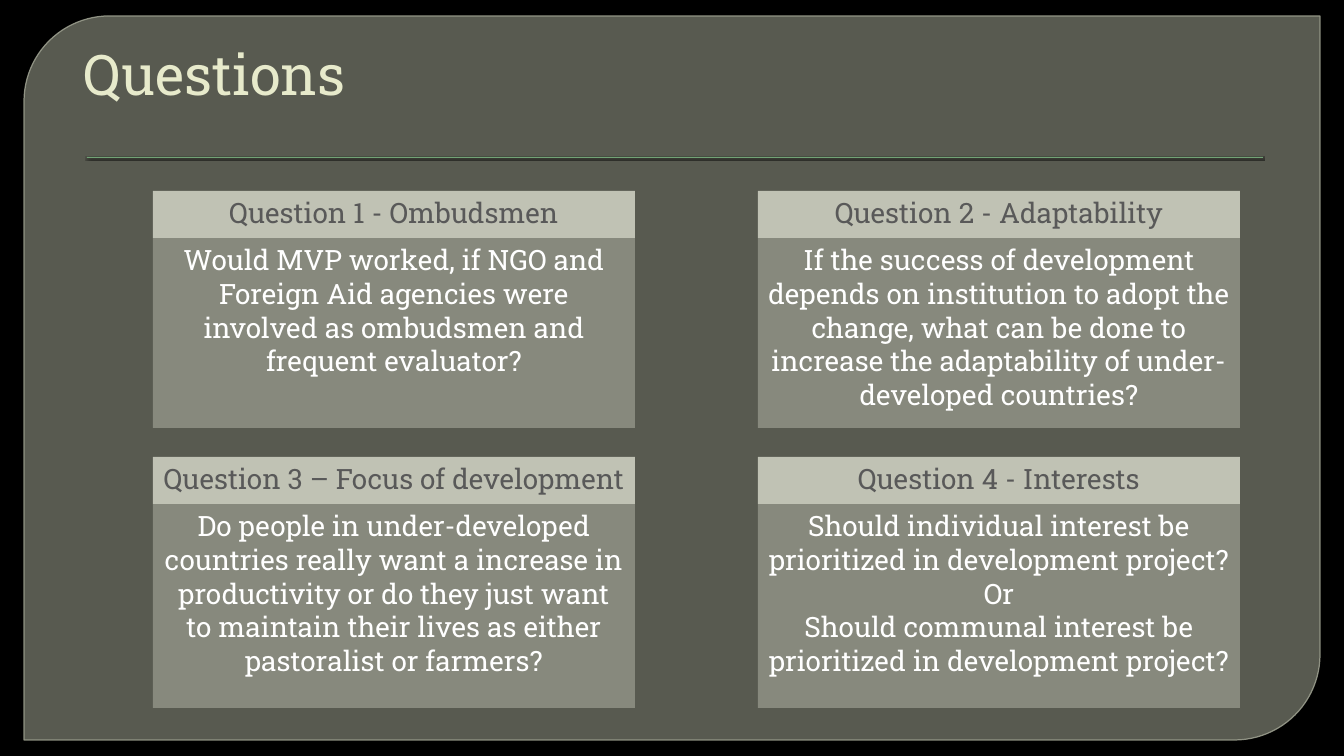
from dataclasses import dataclass

from lxml import etree
from pptx import Presentation
from pptx.dml.color import RGBColor
from pptx.enum.shapes import MSO_SHAPE
from pptx.enum.text import MSO_ANCHOR, MSO_AUTO_SIZE, PP_ALIGN
from pptx.oxml.ns import qn
from pptx.shapes.autoshape import Shape
from pptx.slide import Slide
from pptx.util import Emu, Pt

RECTANGLE = MSO_SHAPE.RECTANGLE
PANEL_SHAPE = MSO_SHAPE.ROUND_2_DIAG_RECTANGLE
TOP, BOTTOM = MSO_ANCHOR.TOP, MSO_ANCHOR.BOTTOM
LEFT, CENTER = PP_ALIGN.LEFT, PP_ALIGN.CENTER

FONT = "Roboto Slab"
BLACK = RGBColor(0x00, 0x00, 0x00)
WHITE = RGBColor(0xFF, 0xFF, 0xFF)
PANEL_FILL = RGBColor(0x88, 0x8B, 0x7B)
PANEL_LINE = RGBColor(0x9D, 0xA0, 0x90)
RULE_GREEN = RGBColor(0x72, 0xA3, 0x76)
TITLE_CREAM = RGBColor(0xE7, 0xEA, 0xCB)
CARD_FILL = RGBColor(0xC4, 0xC6, 0xB8)
HEADING_GRAY = RGBColor(0x59, 0x59, 0x59)

SLIDE_WIDTH, SLIDE_HEIGHT = 1344, 756
EMU_PER_PX = 12192000 / SLIDE_WIDTH

COLUMN_LEFTS = (153, 758)
ROW_TOPS = (191, 457)
BODY_HEIGHTS = (190, 204)
CARD_WIDTH = 482
HEADING_HEIGHT = 47


@dataclass(frozen=True)
class Box:
    left: int
    top: int
    width: int
    height: int


@dataclass(frozen=True)
class Question:
    heading: str
    body: str


QUESTIONS = (
    Question(
        "Question 1 - Ombudsmen",
        "Would MVP worked, if NGO and Foreign Aid agencies were involved as "
        "ombudsmen and frequent evaluator?",
    ),
    Question(
        "Question 2 - Adaptability",
        "If the success of development depends on institution to adopt the change, "
        "what can be done to increase the adaptability of under-developed countries?",
    ),
    Question(
        "Question 3 – Focus of development",
        "Do people in under-developed countries really want a increase in productivity "
        "or do they just want to maintain their lives as either pastoralist or farmers?",
    ),
    Question(
        "Question 4 - Interests",
        "Should individual interest be prioritized in development project? Or\n"
        "Should communal interest be prioritized in development project?",
    ),
)


def px(length: int) -> Emu:
    return Emu(round(length * EMU_PER_PX))


def place(shape: Shape, box: Box) -> None:
    shape.left, shape.top = px(box.left), px(box.top)
    shape.width, shape.height = px(box.width), px(box.height)


def set_opacity(color_parent: etree.ElementBase, percent: int) -> None:
    """Make the solid fill directly inside the given element translucent."""
    color = color_parent.find(f"{qn('a:solidFill')}/{qn('a:srgbClr')}")
    etree.SubElement(color, qn("a:alpha"), val=str(percent * 1000))


def add_filled_shape(
    slide: Slide, box: Box, fill: RGBColor, opacity: int = 100, kind: MSO_SHAPE = RECTANGLE
) -> Shape:
    shape = slide.shapes.add_shape(kind, 0, 0, 0, 0)
    place(shape, box)
    shape.shadow.inherit = False
    shape.fill.solid()
    shape.fill.fore_color.rgb = fill
    set_opacity(shape._element.spPr, opacity)
    shape.line.fill.background()
    return shape


def write_text(
    shape: Shape, text: str, size: int, color: RGBColor, alignment: PP_ALIGN, anchor: MSO_ANCHOR
) -> None:
    frame = shape.text_frame
    frame.text = text
    frame.word_wrap = True
    frame.auto_size = MSO_AUTO_SIZE.NONE
    frame.vertical_anchor = anchor
    for paragraph in frame.paragraphs:
        paragraph.alignment = alignment
        for run in paragraph.runs:
            run.font.name = FONT
            run.font.size = Pt(size)
            run.font.color.rgb = color


def add_panel(slide: Slide) -> None:
    panel = add_filled_shape(slide, Box(24, 16, 1296, 724), PANEL_FILL, 65, PANEL_SHAPE)
    panel.adjustments[0] = 0.118
    panel.adjustments[1] = 0
    panel.line.color.rgb = PANEL_LINE
    panel.line.width = Pt(0.87)
    set_opacity(panel.line._ln, 88)


def add_title_rule(slide: Slide) -> None:
    rule = add_filled_shape(slide, Box(87, 157, 1176, 1), RULE_GREEN)
    effects = rule._element.spPr.find(qn("a:effectLst"))
    shadow = etree.SubElement(
        effects, qn("a:outerShdw"), blurRad=str(Pt(1)), dist=str(Pt(1)), dir=str(90 * 60000)
    )
    color = etree.SubElement(shadow, qn("a:srgbClr"), val=str(BLACK))
    etree.SubElement(color, qn("a:alpha"), val="75000")


def format_title(slide: Slide) -> None:
    title = slide.shapes.title
    place(title, Box(68, 21, 1276, 91))
    write_text(title, "Questions", 40, TITLE_CREAM, LEFT, BOTTOM)
    title.text_frame.margin_left = px(16)
    # Bring the title in front of the translucent panel.
    slide.shapes._spTree.append(title._element)


def add_card(slide: Slide, question: Question, left: int, top: int, body_height: int) -> None:
    body_box = Box(left, top + HEADING_HEIGHT, CARD_WIDTH, body_height)
    body = add_filled_shape(slide, body_box, CARD_FILL, 44)
    write_text(body, question.body, 20, WHITE, CENTER, TOP)
    heading_box = Box(left, top, CARD_WIDTH, HEADING_HEIGHT)
    heading = add_filled_shape(slide, heading_box, CARD_FILL, 97)
    write_text(heading, question.heading, 20, HEADING_GRAY, CENTER, TOP)


def main() -> None:
    presentation = Presentation()
    presentation.slide_width = px(SLIDE_WIDTH)
    presentation.slide_height = px(SLIDE_HEIGHT)
    title_only = presentation.slide_layouts.get_by_name("Title Only")
    slide = presentation.slides.add_slide(title_only)
    slide.background.fill.solid()
    slide.background.fill.fore_color.rgb = BLACK

    add_panel(slide)
    add_title_rule(slide)
    format_title(slide)
    for index, question in enumerate(QUESTIONS):
        row, column = divmod(index, len(COLUMN_LEFTS))
        add_card(slide, question, COLUMN_LEFTS[column], ROW_TOPS[row], BODY_HEIGHTS[row])

    presentation.save("out.pptx")


if __name__ == "__main__":
    main()
